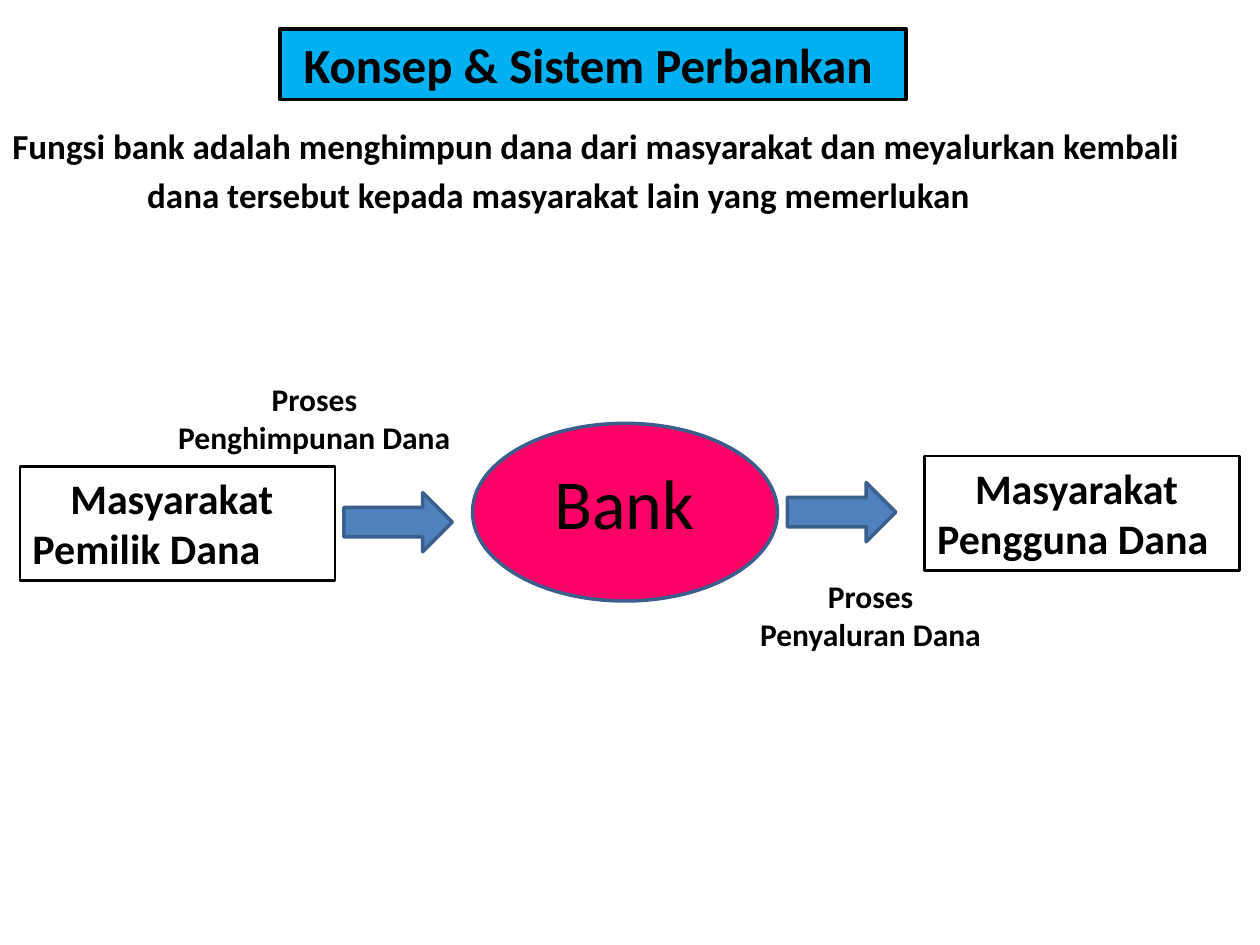
import pptx
import pptx.dml.color
import pptx.enum.shapes
import pptx.enum.text
import pptx.util

Inches, Pt = pptx.util.Inches, pptx.util.Pt
Shape = pptx.enum.shapes.MSO_SHAPE
Align = pptx.enum.text.PP_ALIGN
Anchor = pptx.enum.text.MSO_ANCHOR

COLORS = {"ink": "000000", "title": "00B0F0", "bank": "FF0066",
          "arrow": "4F81BD", "edge": "3A5F8C"}

# Each line of text is (wording, left indent in inches).
TITLE = [("Konsep & Sistem Perbankan", 0.09)]
FUNCTION = [
    ("Fungsi bank adalah menghimpun dana dari masyarakat dan meyalurkan kembali", 0),
    ("dana tersebut kepada masyarakat lain yang memerlukan", 1.07),
]
BANK = [("Bank", 0)]
# Left, top of each group, with its lines.
GROUPS = [
    (7.34, 3.62, [("Masyarakat", 0.3), ("Pengguna Dana", 0)]),
    (0.16, 3.7, [("Masyarakat", 0.3), ("Pemilik Dana", 0)]),
]
ARROWS = [(2.73, 3.91), (6.25, 3.83)]
# Left, top, width of each process label, with its lines.
PROCESSES = [
    (1.09, 2.97, 2.81, [("Proses", 0), ("Penghimpunan Dana", 0)]),
    (5.23, 4.53, 3.36, [("Proses", 0), ("Penyaluran Dana", 0)]),
]


def color(name):
    return pptx.dml.color.RGBColor.from_string(COLORS[name])


def write(box, lines, size, bold=True, align=Align.LEFT, anchor=Anchor.TOP, before=0):
    frame = box.text_frame
    frame.word_wrap = True
    frame.auto_size = pptx.enum.text.MSO_AUTO_SIZE.NONE
    frame.vertical_anchor = anchor
    for index, (wording, indent) in enumerate(lines):
        para = frame.add_paragraph() if index else frame.paragraphs[0]
        para.alignment = align
        para.space_before = Pt(before)
        para._p.get_or_add_pPr().set("marL", str(Inches(indent)))
        span = para.add_run()
        span.text = wording
        for key, value in {"size": Pt(size), "bold": bold, "name": "Calibri"}.items():
            setattr(span.font, key, value)
        span.font.color.rgb = color("ink")


def paint(shape, fill, line, width):
    if fill:
        shape.fill.solid()
        shape.fill.fore_color.rgb = color(fill)
    else:
        shape.fill.background()
    shape.line.color.rgb = color(line)
    shape.line.width = Pt(width)


def add_shape(page, kind, place, fill, line, width):
    shape = page.shapes.add_shape(kind, *map(Inches, place))
    shape.shadow.inherit = False
    paint(shape, fill, line, width)
    return shape


def add_text(page, place, lines, size, **layout):
    write(page.shapes.add_textbox(*map(Inches, place)), lines, size, **layout)


def main():
    deck = pptx.Presentation()
    deck.slide_width, deck.slide_height = Inches(10), Inches(7.5)
    page = deck.slides.add_slide(deck.slide_layouts[5])

    title = page.shapes.title
    for side, length in zip(("left", "top", "width", "height"), (2.22, 0.23, 4.97, 0.56)):
        setattr(title, side, Inches(length))
    paint(title, "title", "ink", 2.25)
    write(title, TITLE, 28, anchor=Anchor.MIDDLE)

    add_text(page, (0, 0.94, 10, 6.41), FUNCTION, 20, before=4)
    add_shape(page, Shape.OVAL, (3.75, 3.36, 2.42, 1.41), "bank", "edge", 2)
    add_text(page, (4.3, 3.6, 1.33, 0.77), BANK, 40, bold=False)
    for left, top, lines in GROUPS:
        group = add_shape(page, Shape.RECTANGLE, (left, top, 2.5, 0.91), None, "ink", 1.5)
        write(group, lines, 24)
    for left, top in ARROWS:
        add_shape(page, Shape.RIGHT_ARROW, (left, top, 0.86, 0.47), "arrow", "edge", 2)
    for left, top, width, lines in PROCESSES:
        add_text(page, (left, top, width, 0.71), lines, 18, align=Align.CENTER)

    deck.save("out.pptx")


if __name__ == "__main__":
    main()
